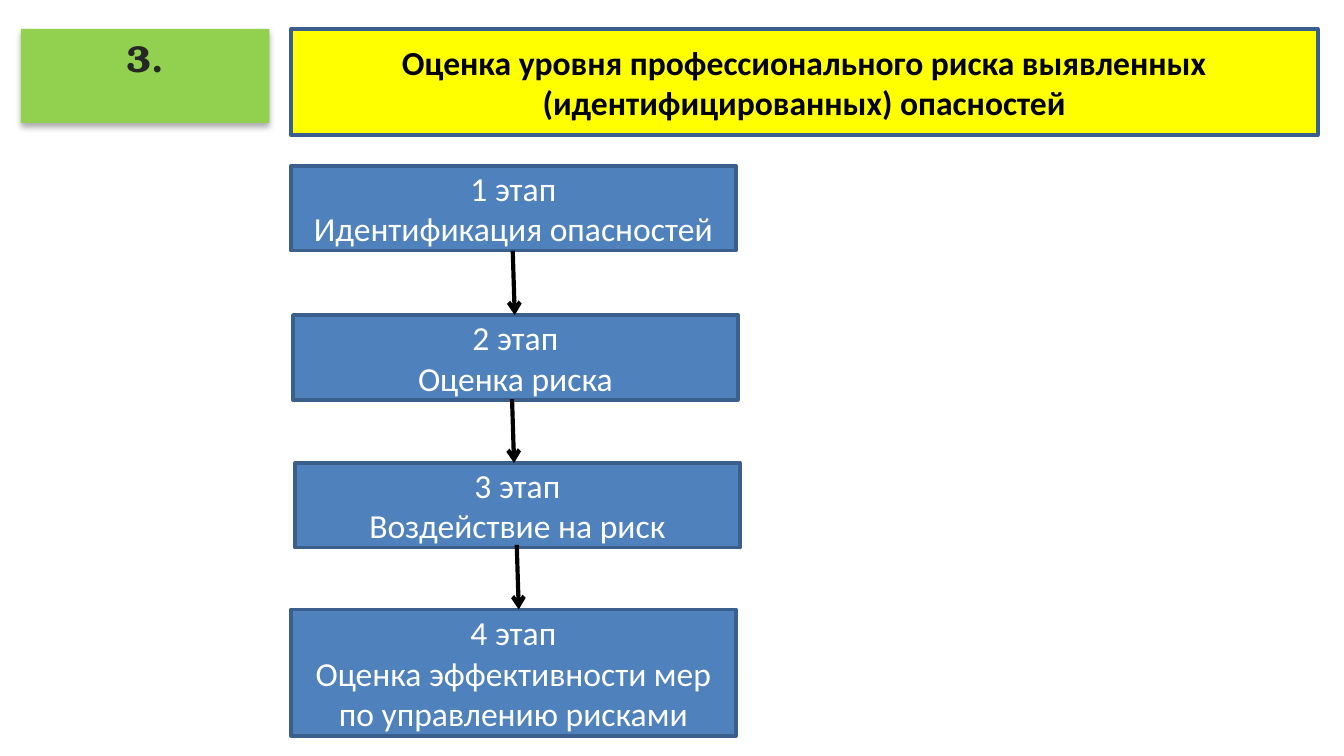
from lxml import etree
from pptx import Presentation
from pptx.dml.color import RGBColor
from pptx.enum import shapes, text
from pptx.oxml import ns
from pptx.util import Pt

PX = 4572  # EMU per px: 200 px to the inch


def color(code):
    return RGBColor.from_string(code)


def add(parent, tag, **attrs):
    return etree.SubElement(parent, ns.qn(tag), attrs)


class Deck:
    fill, edge, ink = "4F81BD", "3A5F8C", "000000"
    base = {"name": "Calibri", "size": Pt(18), "bold": False}

    def __init__(self, wide, high):
        self.file = Presentation()
        self.file.slide_width, self.file.slide_height = wide * PX, high * PX
        self.slide = self.file.slides.add_slide(self.file.slide_layouts[6])

    def box(self, area, lines, fill=fill, edge=edge, ink="FFFFFF",
            anchor=text.MSO_ANCHOR.MIDDLE, wrap=True, **font):
        shape = self.slide.shapes.add_shape(
            shapes.MSO_SHAPE.RECTANGLE, *(n * PX for n in area))
        shape.shadow.inherit = False
        shape.fill.solid()
        shape.fill.fore_color.rgb = color(fill)
        if edge:
            shape.line.color.rgb = color(edge)
            shape.line.width = Pt(2)
        else:
            shape.line.fill.background()
        frame = shape.text_frame
        frame.word_wrap, frame.vertical_anchor = wrap, anchor
        for i, line in enumerate(lines):
            para = frame.add_paragraph() if i else frame.paragraphs[0]
            para.alignment = text.PP_ALIGN.CENTER
            run = para.add_run()
            run.text = line
            for key, value in {**self.base, **font}.items():
                setattr(run.font, key, value)
            run.font.color.rgb = color(ink)
        return shape

    def shade(self, shape):
        effects = shape._element.spPr.find(ns.qn("a:effectLst"))
        shadow = add(effects, "a:outerShdw", blurRad=str(Pt(3.5)),
                     dist=str(Pt(2.2)), dir="5400000", rotWithShape="0")
        black = add(shadow, "a:srgbClr", val=self.ink)
        add(black, "a:alpha", val="32000")

    def arrow(self, *ends):
        link = self.slide.shapes.add_connector(
            shapes.MSO_CONNECTOR.STRAIGHT, *(n * PX for n in ends))
        link.line.color.rgb = color(self.ink)
        link.line.width = Pt(2.25)
        props = link._element.spPr
        add(props.find(ns.qn("a:ln")), "a:tailEnd", type="arrow")
        add(props, "a:effectLst")

    def save(self):
        self.file.save("out.pptx")


def main():
    deck = Deck(2000, 1125)

    # Section number and title
    mark = deck.box((31, 43, 370, 140), ["3."], fill="92D050", edge=None,
                    ink="262626", anchor=text.MSO_ANCHOR.TOP, wrap=False,
                    name="TeX Gyre Bonum", size=Pt(20), bold=True)
    deck.shade(mark)
    deck.box((433, 43, 1528, 158),
             ["Оценка уровня профессионального риска выявленных "
              "(идентифицированных) опасностей"],
             fill="FFFF00", ink="000000", bold=True)

    # Stages: left, top, height, name
    stages = [
        (433, 247, 126, "Идентификация опасностей"),
        (436, 469, 126, "Оценка риска"),
        (439, 689, 126, "Воздействие на риск"),
        (433, 907, 188, "Оценка эффективности мер по управлению рисками"),
    ]
    for i, (left, top, high, name) in enumerate(stages, 1):
        deck.box((left, top, 662, high), [f"{i} этап", name])

    # Arrows between stages
    for left, top, foot in [(763, 373, 469), (762, 594, 689),
                            (769, 811, 907)]:
        deck.arrow(left, top, left + 3, foot)

    deck.save()


if __name__ == "__main__":
    main()
